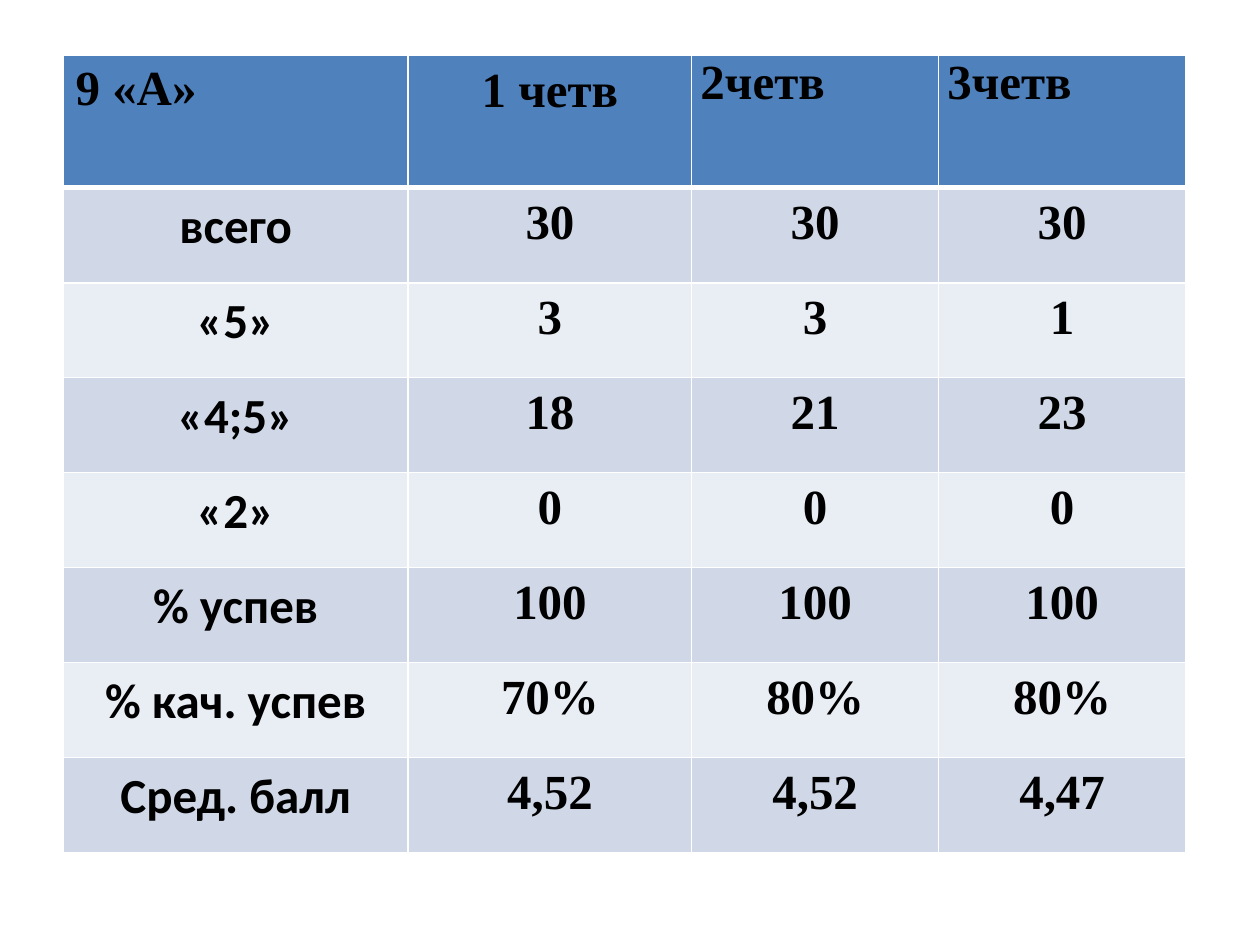
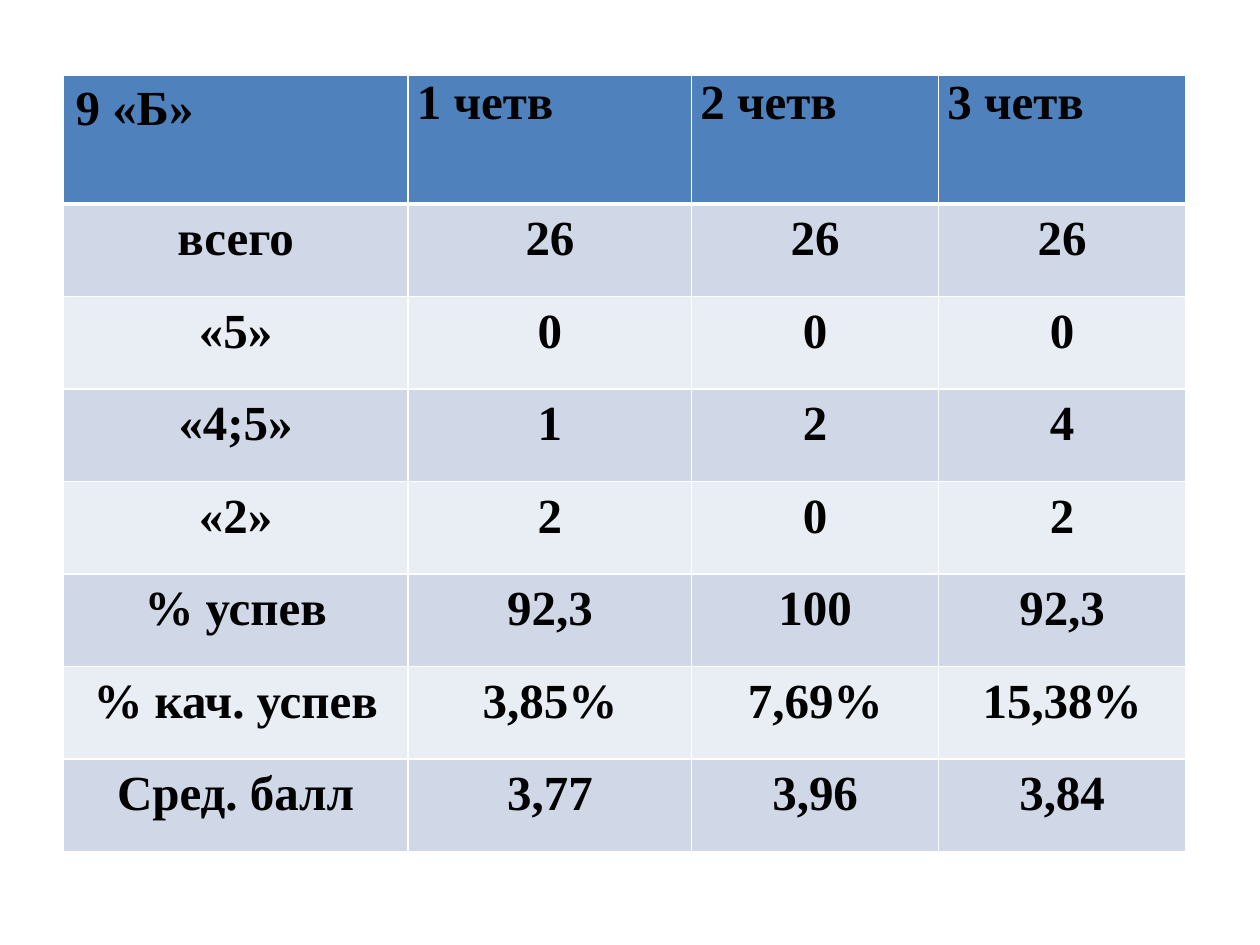
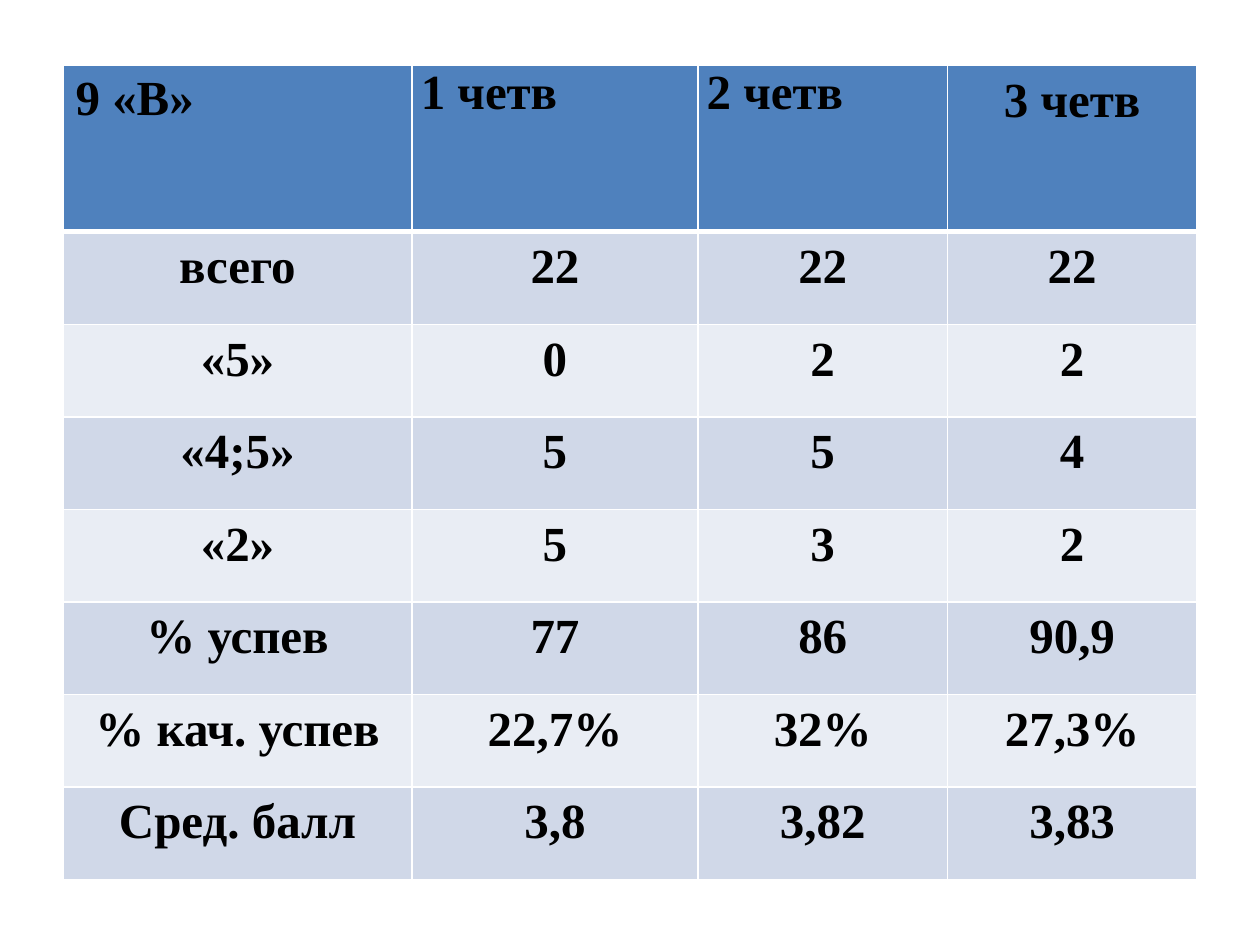
import pptx
import pptx.dml.color
import pptx.enum.text
import pptx.oxml
import pptx.oxml.ns
import pptx.util

Inches = pptx.util.Inches

SERIF = "Times New Roman"
SANS = "Calibri"
BLACK, WHITE = "000000", "FFFFFF"
HEADER_FILL = "4F81BD"
BAND_FILLS = ("D0D8E8", "E9EDF4")
LEFT = 0.5
MEASURES = ["всего", "«5»", "«4;5»", "«2»", "% успев", "% кач. успев", "Сред. балл"]

CLASSES = [
    {
        "header": ["9 «А»", "1 четв", "2четв", "3четв"],
        "centred_header": 1,
        "label_font": SANS,
        "top": 0.44,
        "columns": [2.74, 2.25, 1.96, 1.96],
        "header_height": 1.05,
        "row_height": 0.754,
        "quarters": [
            ["30", "3", "18", "0", "100", "70%", "4,52"],
            ["30", "3", "21", "0", "100", "80%", "4,52"],
            ["30", "1", "23", "0", "100", "80%", "4,47"],
        ],
    },
    {
        "header": ["9 «Б»", "1 четв", "2 четв", "3 четв"],
        "centred_header": None,
        "label_font": SERIF,
        "top": 0.6,
        "columns": [2.74, 2.25, 1.96, 1.96],
        "header_height": 1.02,
        "row_height": 0.734,
        "quarters": [
            ["26", "0", "1", "2", "92,3", "3,85%", "3,77"],
            ["26", "0", "2", "0", "100", "7,69%", "3,96"],
            ["26", "0", "4", "2", "92,3", "15,38%", "3,84"],
        ],
    },
    {
        "header": ["9 «В»", "1 четв", "2 четв", "3 четв"],
        "centred_header": 3,
        "label_font": SERIF,
        "top": 0.52,
        "columns": [2.77, 2.27, 1.98, 1.98],
        "header_height": 1.32,
        "row_height": 0.735,
        "quarters": [
            ["22", "0", "5", "5", "77", "22,7%", "3,8"],
            ["22", "2", "5", "3", "86", "32%", "3,82"],
            ["22", "2", "4", "2", "90,9", "27,3%", "3,83"],
        ],
    },
]


def colour(value):
    return pptx.dml.color.RGBColor.from_string(value)


def set_borders(cell, **widths):
    properties = cell._tc.get_or_add_tcPr()
    for side in ("L", "R", "T", "B"):
        width = pptx.util.Pt(widths.get(side, 1))
        properties.append(pptx.oxml.parse_xml(
            f'<a:ln{side} {pptx.oxml.ns.nsdecls("a")} w="{width}"><a:solidFill>'
            f'<a:srgbClr val="{WHITE}"/></a:solidFill></a:ln{side}>'))


def write_cell(cell, text, fill, font=SERIF, size=28, centred=False):
    cell.fill.solid()
    cell.fill.fore_color.rgb = colour(fill)
    para = cell.text_frame.paragraphs[0]
    if centred:
        para.alignment = pptx.enum.text.PP_ALIGN.CENTER
        para.line_spacing = 1.15
    span = para.add_run()
    span.text = text
    span.font.name = font
    span.font.size = pptx.util.Pt(size)
    span.font.bold = True
    span.font.color.rgb = colour(BLACK)


def set_narrow_margins(cell):
    cell.margin_left = cell.margin_right = Inches(0.07)
    cell.margin_top = cell.margin_bottom = 0


def add_class_page(deck, group):
    page = deck.slides.add_slide(deck.slide_layouts[6])
    rows = [group["header"], *zip(MEASURES, *group["quarters"])]
    heights = [group["header_height"]] + [group["row_height"]] * len(MEASURES)
    table = page.shapes.add_table(
        len(rows), len(group["columns"]), Inches(LEFT), Inches(group["top"]),
        Inches(sum(group["columns"])), Inches(sum(heights))).table
    for column, width in zip(table.columns, group["columns"]):
        column.width = Inches(width)
    for row, height in zip(table.rows, heights):
        row.height = Inches(height)

    for row_index, texts in enumerate(rows):
        is_header = row_index == 0
        fill = HEADER_FILL if is_header else BAND_FILLS[(row_index - 1) % 2]
        for column_index, text in enumerate(texts):
            cell = table.cell(row_index, column_index)
            set_borders(cell, B=3 if is_header else 1, T=3 if row_index == 1 else 1)
            if not (is_header and column_index == 0):
                set_narrow_margins(cell)
            is_label = column_index == 0 and not is_header
            write_cell(cell, text, fill,
                       font=group["label_font"] if is_label else SERIF,
                       centred=not is_header or column_index == group["centred_header"])


def main():
    deck = pptx.Presentation()
    deck.slide_width, deck.slide_height = Inches(10), Inches(7.5)
    for group in CLASSES:
        add_class_page(deck, group)
    deck.save("out.pptx")


if __name__ == "__main__":
    main()
